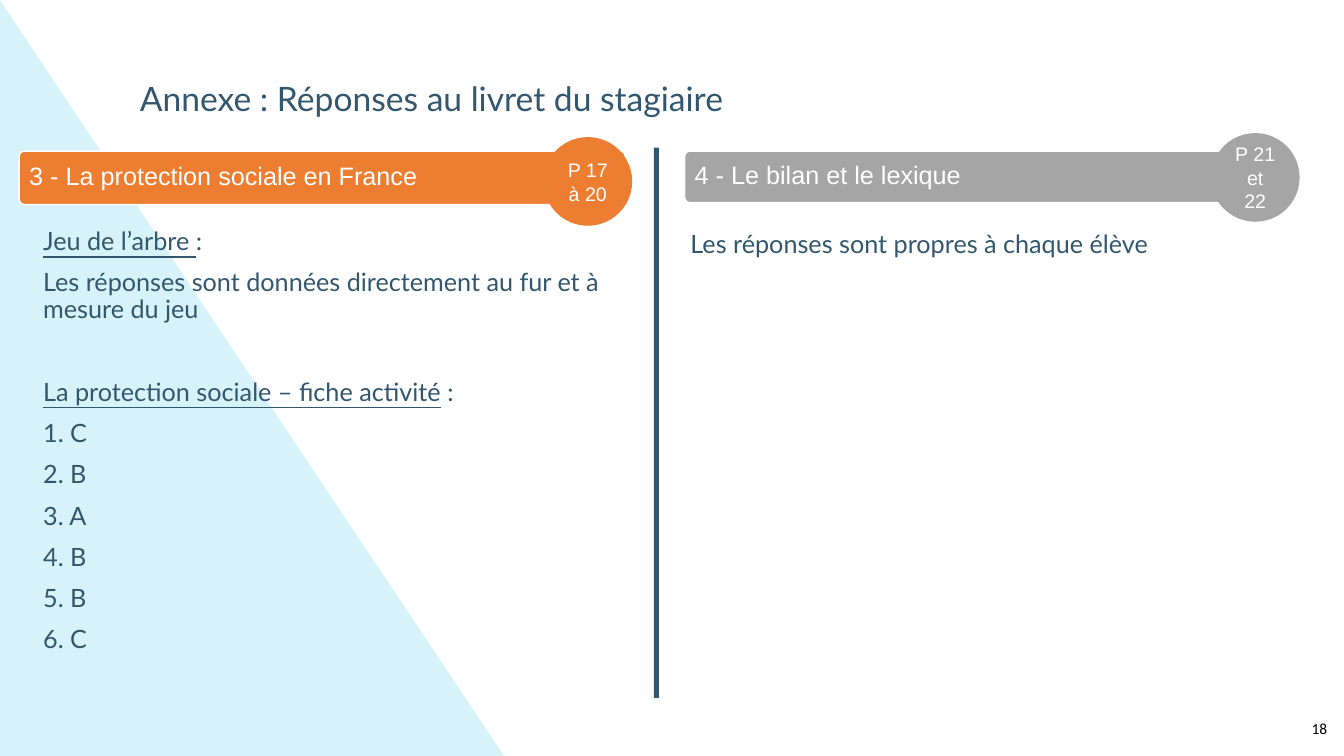
from dataclasses import dataclass

from pptx import Presentation
from pptx.dml.color import RGBColor
from pptx.enum import shapes, text
from pptx.util import Inches, Pt

# Content: a paragraph is a list of (words, underlined) runs
TITLE = "Annexe : Réponses au livret du stagiaire"
PAGE_NUMBER = "18"
TREE_GAME = [
    [("Jeu de l’arbre ", True), (":", False)],
    [("Les réponses sont données directement au fur et à mesure du jeu", False)],
]
ACTIVITY_SHEET = [[("La protection sociale – fiche activité", True), (" :", False)]]
ANSWERS = [[(f"{number}. {letter}", False)] for number, letter in enumerate("CBABBC", 1)]
OWN_ANSWERS = [[("Les réponses sont propres à chaque élève", False)]]


@dataclass(frozen=True)
class Theme:
    ink: str = "33576E"
    pale: str = "D7F2F9"
    orange: str = "ED7D31"
    grey: str = "A5A5A5"
    white: str = "FFFFFF"
    black: str = "000000"
    body_font: str = "Lato"
    label_font: str = "Arial"
    number_font: str = "Calibri"
    title_size: int = 24
    body_size: int = 18
    badge_size: int = 14
    number_size: int = 11


THEME = Theme()
SECTION_GAP = 39.4  # points before the second group of answers

# Heading, page range, colour, bar left, bar height, badge left, badge top
SECTIONS = [
    ("3 - La protection sociale en France", "P 17 à 20", THEME.orange, 0.19, 0.53, 5.39, 1.36),
    ("4 - Le bilan et le lexique", "P 21 et 22", THEME.grey, 6.79, 0.51, 12.01, 1.32),
]
BAR_TOP, BAR_WIDTH, BADGE_SIZE = 1.5, 6.01, 0.88
LABEL_WIDTH, LABEL_INSET = 4.97, 0.07

presentation = Presentation()
presentation.slide_width, presentation.slide_height = Inches(13.33), Inches(7.5)
slide = presentation.slides.add_slide(presentation.slide_layouts[6])


def add_block(kind, box, fill, line=None):
    shape = slide.shapes.add_shape(kind, *map(Inches, box))
    shape.shadow.inherit = False
    shape.fill.solid()
    shape.fill.fore_color.rgb = RGBColor.from_string(fill)
    if line:
        shape.line.color.rgb = RGBColor.from_string(line)
        shape.line.width = Pt(1)
    else:
        shape.line.fill.background()
    return shape


def write(shape, paragraphs, font, size, color, frame_format=None, paragraph_format=None, gaps=None):
    frame = shape.text_frame
    for name, value in {"word_wrap": True, **(frame_format or {})}.items():
        setattr(frame, name, value)
    for index, runs in enumerate(paragraphs):
        paragraph = frame.paragraphs[0] if index == 0 else frame.add_paragraph()
        for name, value in (paragraph_format or {}).items():
            setattr(paragraph, name, value)
        if index:
            paragraph.space_before = Pt((gaps or {}).get(index, 10))
        for words, underlined in runs:
            run = paragraph.add_run()
            run.text = words
            run.font.color.rgb = RGBColor.from_string(color)
            values = {"name": font, "size": Pt(size), "underline": underlined or None}
            for name, value in values.items():
                setattr(run.font, name, value)


def add_text(box, *args, **formats):
    write(slide.shapes.add_textbox(*map(Inches, box)), *args, **formats)


TIGHT = {"line_spacing": 0.9}
MIDDLE = {"vertical_anchor": text.MSO_ANCHOR.MIDDLE}
BODY = (THEME.body_font, THEME.body_size, THEME.ink)

# Background triangle, title and divider
triangle = add_block(shapes.MSO_SHAPE.ISOSCELES_TRIANGLE, (0, 0, 5, 7.5), THEME.pale)
triangle.adjustments[0] = 0
add_text((1.29, 0.77, 9.27, 0.77), [[(TITLE, False)]],
         THEME.body_font, THEME.title_size, THEME.ink, paragraph_format=TIGHT)
divider = add_block(shapes.MSO_SHAPE.ROUND_2_DIAG_RECTANGLE, (3.78, 4.17, 5.46, 0.05), THEME.ink)
divider.rotation = 90

# Section bars with their page badges
margins = {f"margin_{side}": Inches(LABEL_INSET) for side in ("left", "top", "right", "bottom")}
for heading, pages, color, left, height, badge_left, badge_top in SECTIONS:
    bar = add_block(shapes.MSO_SHAPE.ROUNDED_RECTANGLE,
                    (left, BAR_TOP, BAR_WIDTH, height), color, THEME.white)
    bar.adjustments[0] = 0.1
    add_text((left + 0.03, BAR_TOP + 0.01, LABEL_WIDTH, height - 0.04), [[(heading, False)]],
             THEME.label_font, THEME.body_size, THEME.white,
             frame_format={**MIDDLE, **margins}, paragraph_format=TIGHT)
    badge = add_block(shapes.MSO_SHAPE.OVAL, (badge_left, badge_top, BADGE_SIZE, BADGE_SIZE), color)
    write(badge, [[(pages, False)]], THEME.label_font, THEME.badge_size, THEME.white,
          frame_format=MIDDLE, paragraph_format={"alignment": text.PP_ALIGN.CENTER})

# Answers
add_text((0.33, 2.22, 5.97, 4.86), TREE_GAME + ACTIVITY_SHEET + ANSWERS, *BODY,
         paragraph_format=TIGHT, gaps={len(TREE_GAME): SECTION_GAP})
add_text((6.75, 2.25, 5.81, 0.84), OWN_ANSWERS, *BODY, paragraph_format=TIGHT)

# Page number
add_text((12.91, 7.08, 0.37, 0.29), [[(PAGE_NUMBER, False)]],
         THEME.number_font, THEME.number_size, THEME.black, frame_format={"word_wrap": False})

presentation.save("out.pptx")
